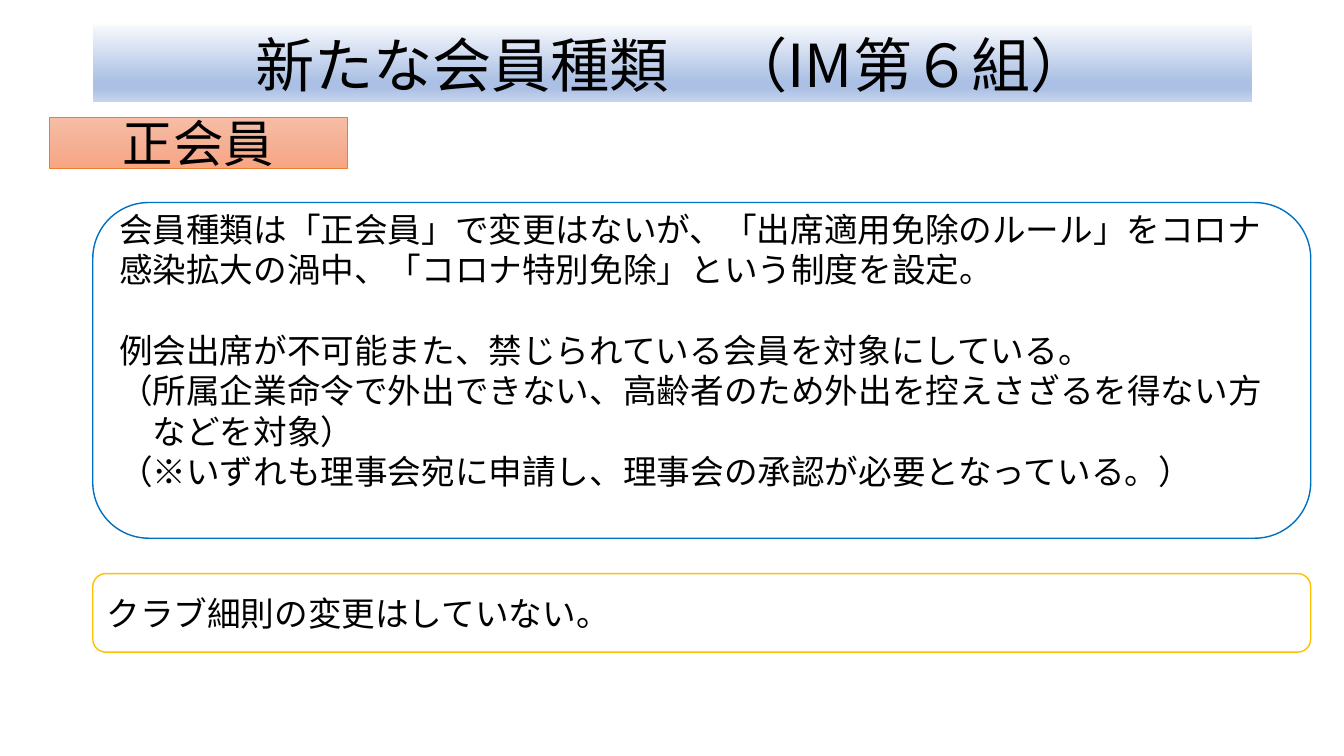
from lxml.etree import SubElement
from pptx import Presentation
from pptx.dml.color import RGBColor
from pptx.enum.shapes import MSO_SHAPE
from pptx.enum.text import MSO_ANCHOR, PP_ALIGN
from pptx.oxml.ns import qn
from pptx.util import Inches, Pt

FONT = "Noto Sans CJK JP"
LINE_FACTOR = 1.2
LEFT, BOX_WIDTH = 0.92, 12.08

# Each paragraph: (text, blank lines of space above it)
BLOCKS = [
    dict(paragraphs=[("新たな会員種類　（IM第６組）", 0)],
         place=(LEFT, 0.25, 11.5, 0.76), kind=MSO_SHAPE.RECTANGLE,
         size=42.3, align=PP_ALIGN.CENTER, line=None,
         fill=[(0, "F6F8FC"), (74, "ABC0E4"), (83, "ABC0E4"), (100, "C7D5ED")]),
    dict(paragraphs=[("正会員", 0)],
         place=(0.49, 1.16, 2.96, 0.51), kind=MSO_SHAPE.RECTANGLE,
         size=36, align=PP_ALIGN.CENTER, line=("ED7D31", 0.5),
         fill=[(0, "F7BDA5"), (50, "F5B196"), (100, "F8A582")]),
    dict(paragraphs=[
            ("会員種類は「正会員」で変更はないが、「出席適用免除のルール」をコロナ"
             "感染拡大の渦中、「コロナ特別免除」という制度を設定。", 0),
            ("例会出席が不可能また、禁じられている会員を対象にしている。", 1),
            ("（所属企業命令で外出できない、高齢者のため外出を控えさざるを得ない方", 0),
            ("　などを対象）", 0),
            ("（※いずれも理事会宛に申請し、理事会の承認が必要となっている。）", 0)],
         place=(LEFT, 2.01, BOX_WIDTH, 3.33), kind=MSO_SHAPE.ROUNDED_RECTANGLE,
         size=24, align=PP_ALIGN.LEFT, line=("0070C0", 1), fill="FFFFFF",
         bottom_inset=0.45),
    dict(paragraphs=[("クラブ細則の変更はしていない。", 0)],
         place=(LEFT, 5.69, BOX_WIDTH, 0.78), kind=MSO_SHAPE.ROUNDED_RECTANGLE,
         size=24, align=PP_ALIGN.LEFT, line=("FFC000", 1), fill="FFFFFF"),
]


def color(value):
    return RGBColor.from_string(value)


def set_format(target, values):
    for name, value in values.items():
        setattr(target, name, value)


def paint(shape, fill):
    """Fill with one colour, or top to bottom with (percent, colour) stops."""
    if isinstance(fill, str):
        shape.fill.solid()
        shape.fill.fore_color.rgb = color(fill)
        return
    shape.fill.gradient()
    shape.fill.gradient_angle = 270
    stops = shape._element.spPr.find(qn("a:gradFill")).find(qn("a:gsLst"))
    for stop in list(stops):
        stops.remove(stop)
    for percent, value in fill:
        stop = SubElement(stops, qn("a:gs"), pos=str(percent * 1000))
        SubElement(stop, qn("a:srgbClr"), val=value)


def outline(shape, line):
    if line is None:
        shape.line.fill.background()
    else:
        shape.line.color.rgb = color(line[0])
        shape.line.width = Pt(line[1])


def write(frame, block):
    set_format(frame, dict(word_wrap=True, vertical_anchor=MSO_ANCHOR.MIDDLE,
                           margin_bottom=Inches(block.get("bottom_inset", 0.05))))
    spacing = block["size"] * LINE_FACTOR
    for index, (text, blank_lines) in enumerate(block["paragraphs"]):
        paragraph = frame.add_paragraph() if index else frame.paragraphs[0]
        set_format(paragraph, dict(alignment=block["align"], line_spacing=Pt(spacing),
                                   space_before=Pt(spacing * blank_lines)))
        run = paragraph.add_run()
        run.text = text
        set_format(run.font, dict(name=FONT, size=Pt(block["size"])))
        run.font.color.rgb = color("000000")
        SubElement(run.font._element, qn("a:ea"), typeface=FONT)


def add_block(slide, block):
    shape = slide.shapes.add_shape(block["kind"], *map(Inches, block["place"]))
    shape.shadow.inherit = False
    paint(shape, block["fill"])
    outline(shape, block["line"])
    write(shape.text_frame, block)


def main():
    presentation = Presentation()
    set_format(presentation, dict(slide_width=Inches(13.33), slide_height=Inches(7.5)))
    slide = presentation.slides.add_slide(presentation.slide_layouts[6])
    for block in BLOCKS:
        add_block(slide, block)
    presentation.save("out.pptx")


if __name__ == "__main__":
    main()
